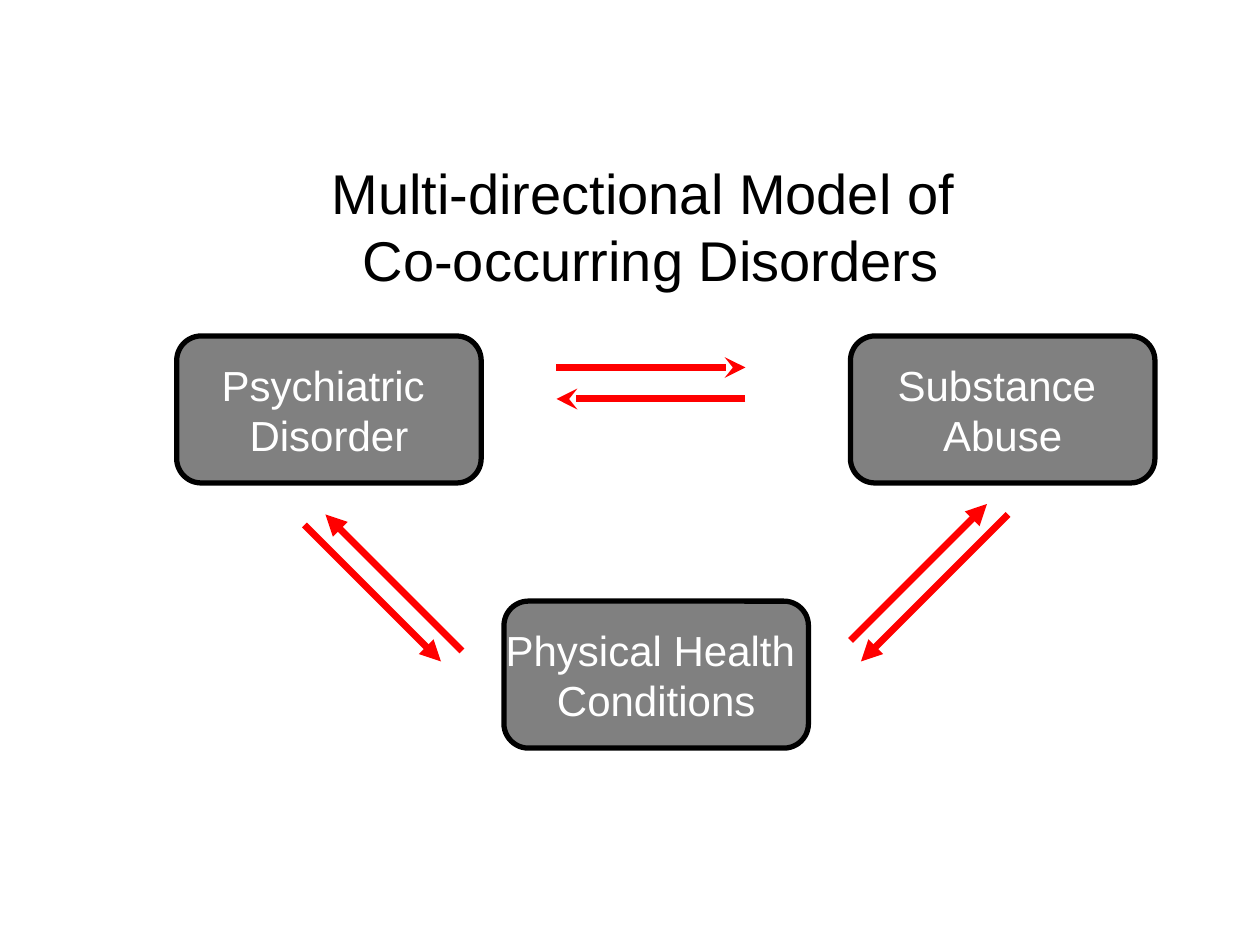
from lxml import etree
from pptx import Presentation
from pptx.dml.color import RGBColor
from pptx.enum import shapes, text
from pptx.oxml import ns
from pptx.util import Pt


def color(value):
    return RGBColor.from_string(value)


def add_run(paragraph, words, size, value):
    run = paragraph.add_run()
    run.text = words
    run.font.name = "Arial"
    run.font.size = Pt(size)
    run.font.color.rgb = color(value)


deck = Presentation()
deck.slide_width, deck.slide_height = Pt(720), Pt(540)
slide = deck.slides.add_slide(deck.slide_layouts[6])

title = slide.shapes.add_textbox(Pt(48), Pt(84), Pt(648), Pt(90)).text_frame
title.word_wrap = True
title.vertical_anchor = text.MSO_ANCHOR.MIDDLE
heading = title.paragraphs[0]
heading.alignment = text.PP_ALIGN.CENTER
add_run(heading, "Multi-directional Model of ", 32, "000000")
heading.add_line_break()
add_run(heading, "Co-occurring Disorders", 32, "000000")

conditions = [
    (101, 192, ["Psychiatric ", "Disorder"]),
    (486, 192, ["Substance ", "Abuse"]),
    (288, 343.5, ["Physical Health ", "Conditions"]),
]
for left, top, lines in conditions:
    condition = slide.shapes.add_shape(
        shapes.MSO_SHAPE.ROUNDED_RECTANGLE, Pt(left), Pt(top), Pt(174), Pt(84))
    condition.shadow.inherit = False
    condition.fill.solid()
    condition.fill.fore_color.rgb = color("808080")
    condition.line.color.rgb = color("000000")
    condition.line.width = Pt(3)
    label = condition.text_frame
    label.word_wrap = False
    label.vertical_anchor = text.MSO_ANCHOR.MIDDLE
    for index, words in enumerate(lines):
        paragraph = label.add_paragraph() if index else label.paragraphs[0]
        paragraph.alignment = text.PP_ALIGN.CENTER
        add_run(paragraph, words, 24, "FFFFFF")

influences = [
    (318, 210, 426, 210, "stealth"),
    (426, 228, 318, 228, "stealth"),
    (486, 366, 564, 288, "triangle"),
    (576, 294, 492, 378, "triangle"),
    (174, 300, 252, 378, "triangle"),
    (264, 372, 186, 294, "triangle"),
]
for *ends, head in influences:
    influence = slide.shapes.add_connector(
        shapes.MSO_CONNECTOR.STRAIGHT, *[Pt(end) for end in ends])
    influence.line.color.rgb = color("FF0000")
    influence.line.width = Pt(4)
    etree.SubElement(influence.line._get_or_add_ln(), ns.qn("a:tailEnd"), type=head)
    etree.SubElement(influence._element.spPr, ns.qn("a:effectLst"))

deck.save("out.pptx")
